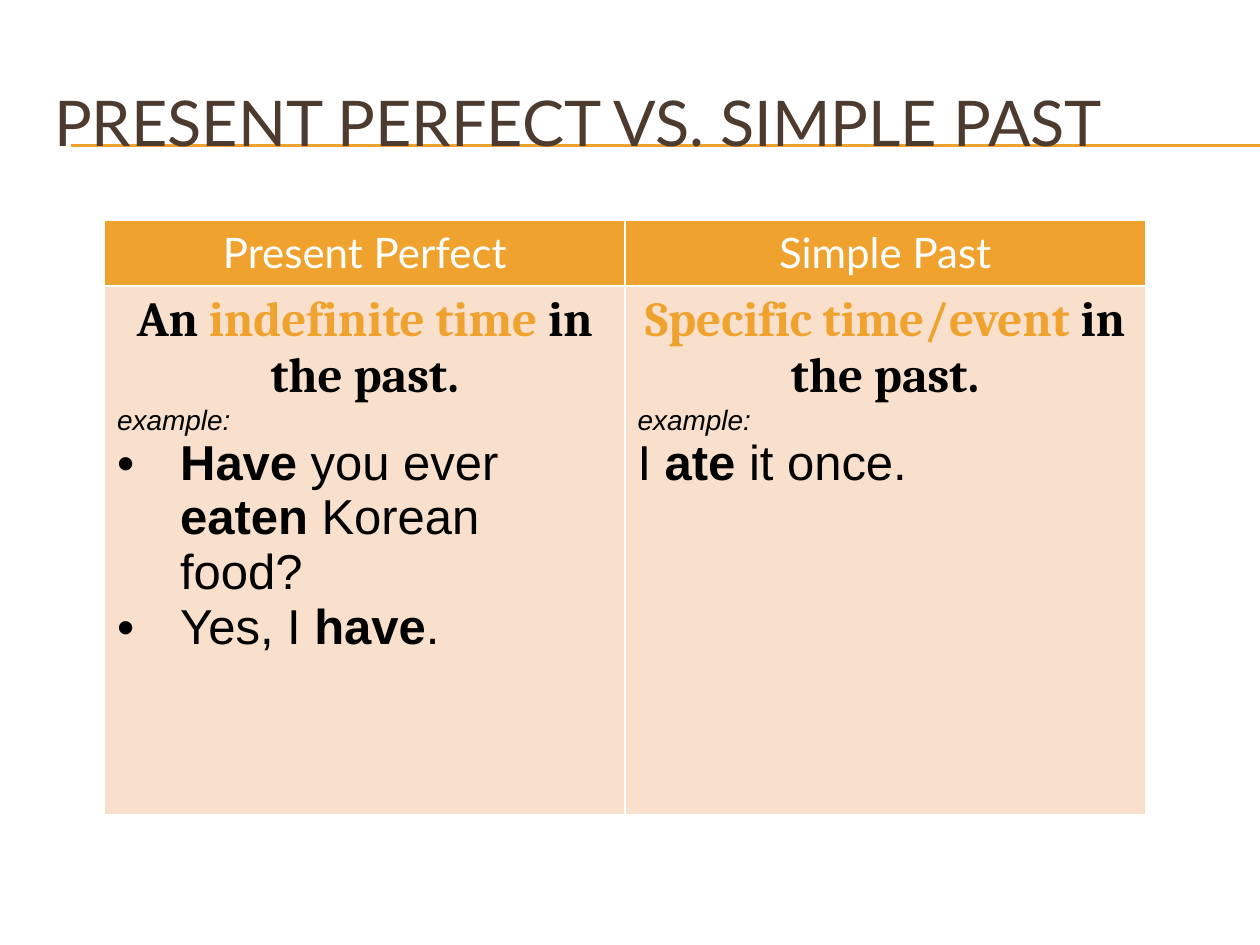
from lxml import etree
from pptx import Presentation
from pptx.dml.color import RGBColor
from pptx.enum.shapes import MSO_CONNECTOR
from pptx.enum.text import MSO_ANCHOR, PP_ALIGN
from pptx.oxml.ns import qn
from pptx.util import Inches, Pt

STRAIGHT = MSO_CONNECTOR.STRAIGHT
MIDDLE = MSO_ANCHOR.MIDDLE
LEFT, CENTER = PP_ALIGN.LEFT, PP_ALIGN.CENTER

ORANGE, PEACH, BROWN = "F0A22E", "F9E0CD", "4E3B30"
WHITE, BLACK = "FFFFFF", "000000"

HEADERS = ["Present Perfect", "Simple Past"]
# Each meaning is a list of (text, colour).
MEANINGS = [
    [("An ", BLACK), ("indefinite time ", ORANGE), ("in the past.", BLACK)],
    [("Specific time/event", ORANGE), (" in the past.", BLACK)],
]
# Each example is a list of (text, bold).
EXAMPLES = [
    [
        [("Have", True), (" you ever ", False), ("eaten", True), (" Korean food?", False)],
        [("Yes, I ", False), ("have", True), (".", False)],
    ],
    [[("I ", False), ("ate", True), (" it once.", False)]],
]


def rgb(color):
    return RGBColor.from_string(color)


def add_run(paragraph, text, size, font, color=BLACK, bold=False, italic=False):
    run = paragraph.add_run()
    run.text = text
    run.font.size = Pt(size)
    run.font.name = font
    run.font.color.rgb = rgb(color)
    run.font.bold = bold
    run.font.italic = italic


def add_bullet(paragraph):
    properties = paragraph._p.get_or_add_pPr()
    properties.set("marL", str(Inches(0.5)))
    properties.set("indent", str(Inches(-0.5)))
    etree.SubElement(properties, qn("a:buFont"), typeface="Arial")
    etree.SubElement(properties, qn("a:buChar"), char="•")


def add_rule(slide, top):
    rule = slide.shapes.add_connector(
        STRAIGHT, Inches(0.56), Inches(top), Inches(10), Inches(top))
    rule.line.color.rgb = rgb(ORANGE)
    rule.line.width = Pt(0.75)
    etree.SubElement(rule.element.spPr, qn("a:effectLst"))


def add_title(slide, text):
    """Fill the title placeholder and bring it in front of the rules."""
    title = slide.shapes.title
    title.left, title.top = Inches(0.33), Inches(0.5)
    title.width, title.height = Inches(9.5), Inches(0.92)
    title.text_frame.vertical_anchor = MIDDLE
    paragraph = title.text_frame.paragraphs[0]
    paragraph.alignment = LEFT
    add_run(paragraph, text, 36, "Lato", BROWN)
    title.element.getparent().append(title.element)


def style_cell(cell, fill):
    """Give the cell white borders, then its fill, in schema order."""
    properties = cell._tc.get_or_add_tcPr()
    for side in ("lnL", "lnR", "lnT", "lnB"):
        border = etree.SubElement(properties, qn(f"a:{side}"), w=str(Pt(1)))
        border_fill = etree.SubElement(border, qn("a:solidFill"))
        etree.SubElement(border_fill, qn("a:srgbClr"), val=WHITE)
    cell.fill.solid()
    cell.fill.fore_color.rgb = rgb(fill)


def fill_header(cell, text):
    style_cell(cell, ORANGE)
    paragraph = cell.text_frame.paragraphs[0]
    paragraph.alignment = CENTER
    add_run(paragraph, text, 24, "Lato", WHITE)


def fill_body(cell, meaning, examples):
    style_cell(cell, PEACH)
    frame = cell.text_frame
    paragraph = frame.paragraphs[0]
    paragraph.alignment = CENTER
    for text, color in meaning:
        add_run(paragraph, text, 28, "Cambria", color, bold=True)
    add_run(frame.add_paragraph(), "example:", 16, "Arial", italic=True)
    for example in examples:
        paragraph = frame.add_paragraph()
        if len(examples) > 1:
            add_bullet(paragraph)
        for text, bold in example:
            add_run(paragraph, text, 28, "Arial", bold=bold)


def add_comparison_table(slide):
    table = slide.shapes.add_table(
        2, len(HEADERS), Inches(0.83), Inches(1.75), Inches(8.26), Inches(4.72)).table
    table.rows[0].height = Inches(0.52)
    table.rows[1].height = Inches(4.2)
    for index, header in enumerate(HEADERS):
        table.columns[index].width = Inches(4.13)
        fill_header(table.cell(0, index), header)
        fill_body(table.cell(1, index), MEANINGS[index], EXAMPLES[index])


def main():
    presentation = Presentation()
    presentation.slide_width = Inches(10)
    presentation.slide_height = Inches(7.5)
    slide = presentation.slides.add_slide(presentation.slide_layouts[5])
    for top in (1.15, 1.16):
        add_rule(slide, top)
    add_title(slide, "PRESENT PERFECT VS. SIMPLE PAST")
    add_comparison_table(slide)
    presentation.save("out.pptx")


if __name__ == "__main__":
    main()
